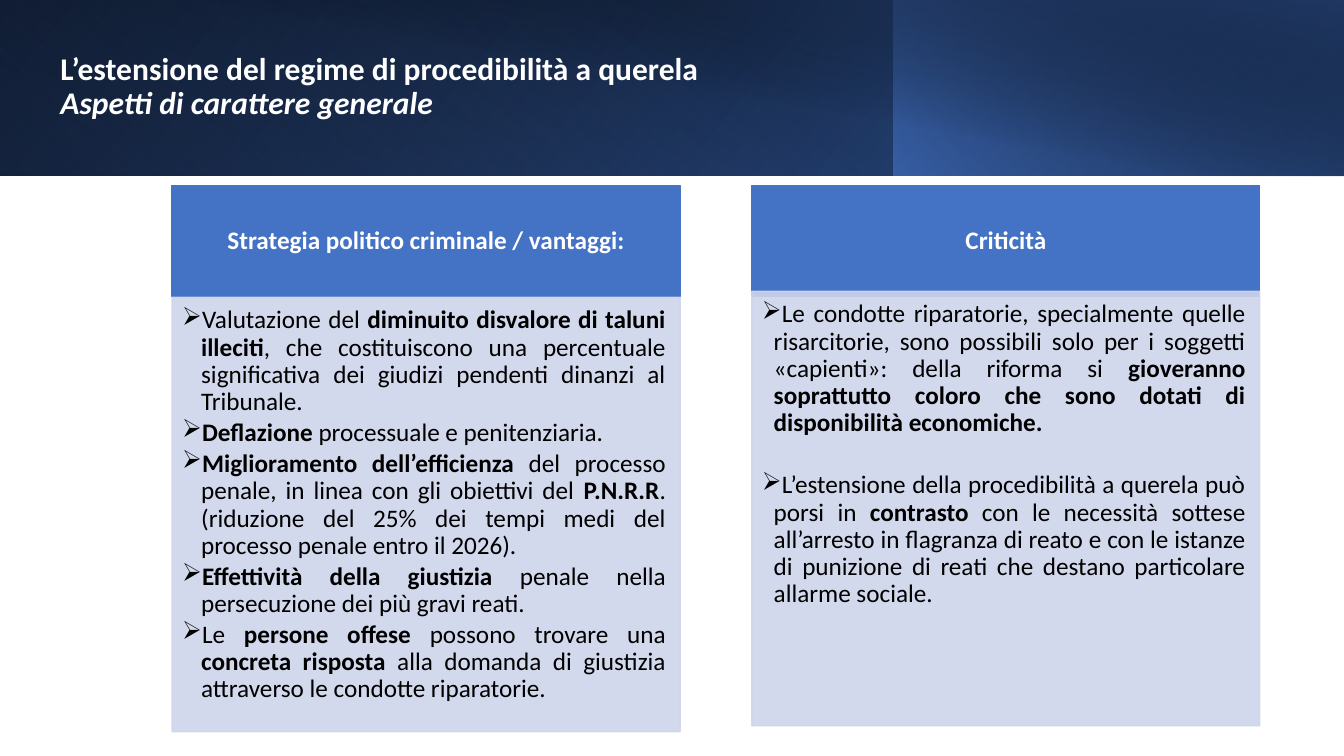
import pptx
import pptx.util
import pptx.oxml
import pptx.oxml.ns
from pptx.dml.color import RGBColor
from pptx.enum.shapes import MSO_SHAPE
from pptx.enum.text import MSO_ANCHOR, MSO_AUTO_SIZE, PP_ALIGN

Cm, Pt, qn = pptx.util.Cm, pptx.util.Pt, pptx.oxml.ns.qn

THEME = {
    "font": "Calibri",
    "title": Pt(22.5), "text": Pt(18),
    "white": "FFFFFF", "black": "000000",
    "blue": "4472C4", "mid": "2F5597", "navy": "203864", "pale": "CFD5EA",
}


def add_box(left, top, width, height):
    box = slide.shapes.add_shape(
        MSO_SHAPE.RECTANGLE, Cm(left), Cm(top), Cm(width), Cm(height))
    box.shadow.inherit = False
    return box


def add_runs(para, text, size, color, bold=False):
    """Add text to a paragraph; each * switches bold on or off."""
    for part in text.split("*"):
        if part:
            run = para.add_run()
            run.text = part
            look = {"name": THEME["font"], "size": THEME[size], "bold": bold}
            for key, value in look.items():
                setattr(run.font, key, value)
            run.font.color.rgb = RGBColor.from_string(THEME[color])
        bold = not bold


deck = pptx.Presentation()
deck.slide_width, deck.slide_height = Cm(33.87), Cm(19.05)
slide = deck.slides.add_slide(deck.slide_layouts[5])

# Banner: stacked gradients, each stop being position, colour, opacity
BANDS = [
    (0, 33.87, 4.42, 0, True, 140, [(0, "black", 100), (100, "mid", 100)]),
    (0, 22.56, 4.42, 180, True, 230, [(20, "blue", 0), (100, "navy", 55)]),
    (22.53, 11.33, 4.42, 0, True, 220, [(0, "blue", 66), (100, "black", 30)]),
    (1.27, 32.59, 4.45, 0, False, 280, [(50, "black", 0), (99, "navy", 52)]),
]
for left, width, height, turn, flip, angle, stops in BANDS:
    band = add_box(left, 0, width, height)
    band.rotation = turn
    band.line.fill.background()
    band.fill.background()
    props = band._element.spPr
    if flip:
        props.find(qn("a:xfrm")).set("flipH", "1")
    marks = "".join(
        f'<a:gs pos="{pos * 1000}"><a:srgbClr val="{THEME[color]}">'
        f'<a:alpha val="{alpha * 1000}"/></a:srgbClr></a:gs>'
        for pos, color, alpha in stops)
    blend = pptx.oxml.parse_xml(
        f'<a:gradFill {pptx.oxml.ns.nsdecls("a")} rotWithShape="1">'
        f'<a:gsLst>{marks}</a:gsLst>'
        f'<a:lin ang="{angle * 60000}" scaled="0"/></a:gradFill>')
    props.replace(props.find(qn("a:noFill")), blend)

# Title, brought in front of the banner
title = slide.shapes.title
title._element.getparent().append(title._element)
place = {"left": Cm(1.27), "top": Cm(0.76), "width": Cm(27.48), "height": Cm(2.87)}
for key, value in place.items():
    setattr(title, key, value)
frame = title.text_frame
frame.auto_size = MSO_AUTO_SIZE.NONE
frame.word_wrap = True
frame.vertical_anchor = MSO_ANCHOR.MIDDLE
para = frame.paragraphs[0]
para.alignment, para.line_spacing = PP_ALIGN.LEFT, 0.9
add_runs(para, "L’estensione del regime di procedibilità a querela", "title", "white", True)
para.add_line_break()
add_runs(para, "Aspetti di carattere generale", "title", "white", True)
para.runs[-1].font.italic = True

# Columns: left, body top, bullet indent, gap after a bullet, heading, bullets
COLUMNS = [
    (4.34, 7.49, 0.48, 2.7, "Strategia politico criminale / vantaggi:", [
        "Valutazione del *diminuito disvalore di taluni illeciti*, che costituiscono "
        "una percentuale significativa dei giudizi pendenti dinanzi al Tribunale.",
        "*Deflazione* processuale e penitenziaria.",
        "*Miglioramento dell’efficienza* del processo penale, in linea con gli "
        "obiettivi del *P.N.R.R*. (riduzione del 25% dei tempi medi del processo "
        "penale entro il 2026).",
        "*Effettività della giustizia *penale nella persecuzione dei più gravi reati.",
        "Le *persone offese *possono trovare una *concreta risposta *alla domanda "
        "di giustizia attraverso le condotte riparatorie.",
    ]),
    (18.95, 7.34, 0.3, 24.9, "Criticità", [
        "Le condotte riparatorie, specialmente quelle risarcitorie, sono possibili "
        "solo per i soggetti «capienti»: della riforma si *gioveranno soprattutto "
        "coloro che sono dotati di disponibilità economiche.*",
        "L’estensione della procedibilità a querela può porsi in *contrasto *con le "
        "necessità sottese all’arresto in flagranza di reato e con le istanze di "
        "punizione di reati che destano particolare allarme sociale.",
    ]),
]
for left, top, indent, gap, heading, bullets in COLUMNS:
    head = add_box(left, 4.67, 12.8, 2.8)
    body = add_box(left, top, 12.8, 10.95)
    for box, color, anchor, pads in (
            (head, "blue", MSO_ANCHOR.MIDDLE, (0.36, 0.2, 0.36, 0.2)),
            (body, "pale", MSO_ANCHOR.TOP, (0.25, 0.25, 0.36, 0.41))):
        box.fill.solid()
        box.fill.fore_color.rgb = RGBColor.from_string(THEME[color])
        box.line.color.rgb = RGBColor.from_string(THEME[color])
        box.line.width = Pt(1)
        box.text_frame.word_wrap = True
        box.text_frame.vertical_anchor = anchor
        for side, pad in zip(("left", "top", "right", "bottom"), pads):
            setattr(box.text_frame, "margin_" + side, Cm(pad))
    for tint in body._element.spPr.iter(qn("a:srgbClr")):
        tint.append(pptx.oxml.parse_xml(
            f'<a:alpha {pptx.oxml.ns.nsdecls("a")} val="90000"/>'))

    para = head.text_frame.paragraphs[0]
    para.alignment, para.line_spacing = PP_ALIGN.CENTER, 0.9
    add_runs(para, heading, "text", "white", True)

    for index, text in enumerate(bullets):
        frame = body.text_frame
        para = frame.add_paragraph() if index else frame.paragraphs[0]
        look = {"alignment": PP_ALIGN.JUSTIFY, "level": 1,
                "line_spacing": 0.9, "space_after": Pt(gap)}
        for key, value in look.items():
            setattr(para, key, value)
        props = para._p.get_or_add_pPr()
        props.set("marL", str(Cm(indent)))
        props.set("indent", str(-Cm(indent)))
        props.append(pptx.oxml.parse_xml(
            f'<a:buChar {pptx.oxml.ns.nsdecls("a")} char="➢"/>'))
        add_runs(para, text, "text", "black")

deck.save("out.pptx")
